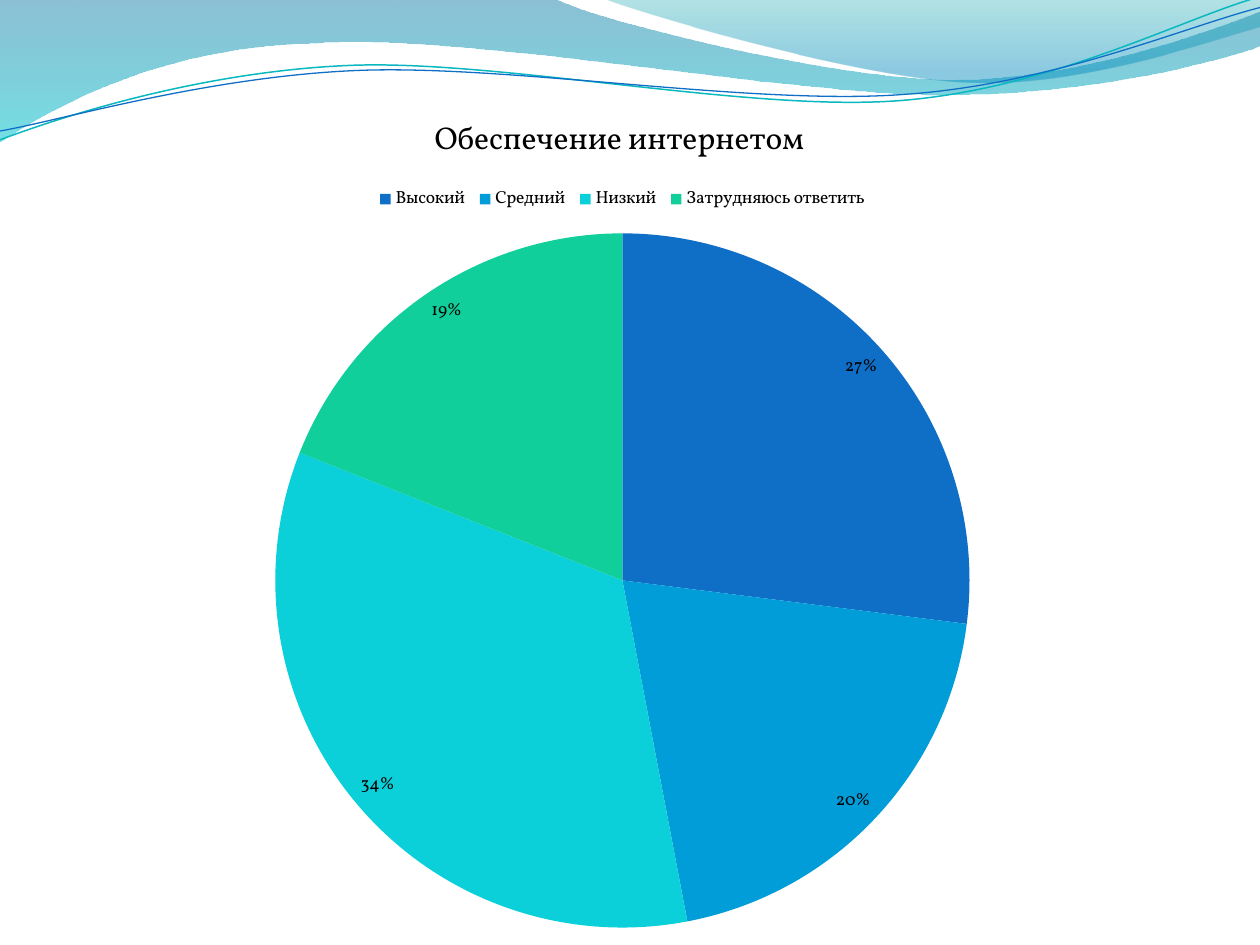
from dataclasses import dataclass

from lxml import etree
from pptx import Presentation
from pptx.chart.data import CategoryChartData
from pptx.dml.color import RGBColor
from pptx.enum.chart import XL_CHART_TYPE, XL_LABEL_POSITION, XL_LEGEND_POSITION
from pptx.oxml.ns import qn
from pptx.util import Inches, Pt

PIE = XL_CHART_TYPE.PIE
LEGEND_TOP = XL_LEGEND_POSITION.TOP
INSIDE_END = XL_LABEL_POSITION.INSIDE_END


@dataclass(frozen=True)
class Theme:
    font: str = "Vollkorn"
    text: str = "000000"
    title_size: int = 18
    body_size: int = 10
    slices: tuple = ("0F6FC6", "009DD9", "0BD0D9", "10CF9B")
    # Gradient stops: position, colour, opacity in percent
    left_wave: tuple = ((0, "0074A1", 45), (1, "00C6CF", 55))
    right_wave: tuple = ((0, "00A1A9", 30), (0.8, "008BBF", 45))
    teal_line: str = "0AB8BF"
    blue_line: str = "0F6FC6"


theme = Theme()


def add_curve(slide, path, closed):
    """Draw a path in inches: two numbers are a straight step, six a Bezier curve."""
    points = [(Inches(segment[i]), Inches(segment[i + 1]))
              for segment in path for i in range(0, len(segment), 2)]
    builder = slide.shapes.build_freeform(*points[0], scale=1.0)
    builder.add_line_segments(points[1:], close=closed)
    shape = builder.convert_to_shape()
    shape.shadow.inherit = False
    steps = iter(list(shape.element.spPr.iter(qn("a:lnTo"))))
    for segment in path[1:]:
        step = next(steps)
        if len(segment) == 6:
            curve = etree.Element(qn("a:cubicBezTo"))
            step.addprevious(curve)
            for control in (step, next(steps), next(steps)):
                curve.append(control[0])
                control.getparent().remove(control)
    return shape


presentation = Presentation()
presentation.slide_width = Inches(10)
presentation.slide_height = Inches(7.5)
slide = presentation.slides.add_slide(presentation.slide_layouts[6])

# Header waves
waves = [
    ([(0, 0), (4.4, -0.01), (4.76, 0.17, 6.64, 0.63, 7.58, 0.63),
      (8.53, 0.63, 9.58, 0.26, 10, 0.09), (10.01, 0.36),
      (9.83, 0.44, 8.7, 0.76, 7.46, 0.75), (6.22, 0.75, 3.82, 0.28, 2.57, 0.34),
      (1.29, 0.36, 0.46, 0.83, -0.01, 1.13)], theme.left_wave),
    ([(4.79, -0.01), (5.09, 0.11, 6.82, 0.62, 7.69, 0.65),
      (8.56, 0.69, 9.61, 0.32, 10, 0.21), (10, 0)], theme.right_wave),
]
for path, stops in waves:
    wave = add_curve(slide, path, closed=True)
    wave.line.fill.background()
    wave.fill.gradient()
    wave.fill.gradient_angle = 270
    for stop, (position, color, _) in zip(wave.fill.gradient_stops, stops):
        stop.position = position
        stop.color.rgb = RGBColor.from_string(color)
    color_elements = wave.element.spPr.iter(qn("a:srgbClr"))
    for element, (_, _, opacity) in zip(color_elements, stops):
        etree.SubElement(element, qn("a:alpha"), val=str(opacity * 1000))

# Thin lines under the waves
lines = [
    ([(0, 1.11), (0.48, 0.93, 1.58, 0.57, 2.77, 0.52),
      (3.95, 0.47, 5.93, 0.89, 7.13, 0.8), (8.33, 0.71, 9.38, 0.15, 9.98, -0.02)],
     theme.teal_line, 0.85),
    ([(0, 1.04), (0.47, 0.96, 1.64, 0.61, 2.83, 0.56),
      (4.03, 0.51, 5.97, 0.84, 7.17, 0.75), (8.36, 0.67, 9.41, 0.21, 10, 0.06)],
     theme.blue_line, 0.75),
]
for path, color, width in lines:
    line = add_curve(slide, path, closed=False)
    line.fill.background()
    line.line.color.rgb = RGBColor.from_string(color)
    line.line.width = Pt(width)

# Pie chart
chart_data = CategoryChartData()
chart_data.categories = ["Высокий ", "Средний ", "Низкий ", "Затрудняюсь ответить"]
chart_data.add_series("Series 1", (27, 20, 34, 19))
chart = slide.shapes.add_chart(
    PIE, 0, Inches(0.68), Inches(9.88), Inches(6.82), chart_data).chart
chart.font.name = theme.font
chart.font.size = Pt(theme.body_size)
chart.font.color.rgb = RGBColor.from_string(theme.text)

chart.has_title = True
chart.chart_title.include_in_layout = False
title = chart.chart_title.text_frame
title.text = "Обеспечение интернетом "
title_font = title.paragraphs[0].runs[0].font
title_font.name = theme.font
title_font.size = Pt(theme.title_size)
title_font.bold = False
title_font.color.rgb = RGBColor.from_string(theme.text)

chart.has_legend = True
chart.legend.position = LEGEND_TOP
chart.legend.include_in_layout = False

plot = chart.plots[0]
plot.vary_by_categories = True
plot.has_data_labels = True
labels = plot.data_labels
labels.show_percentage = True
labels.show_value = False
labels.number_format = "0%"
labels.number_format_is_linked = False
labels.position = INSIDE_END

for index, color in enumerate(theme.slices):
    fill = plot.series[0].points[index].format.fill
    fill.solid()
    fill.fore_color.rgb = RGBColor.from_string(color)

presentation.save("out.pptx")
